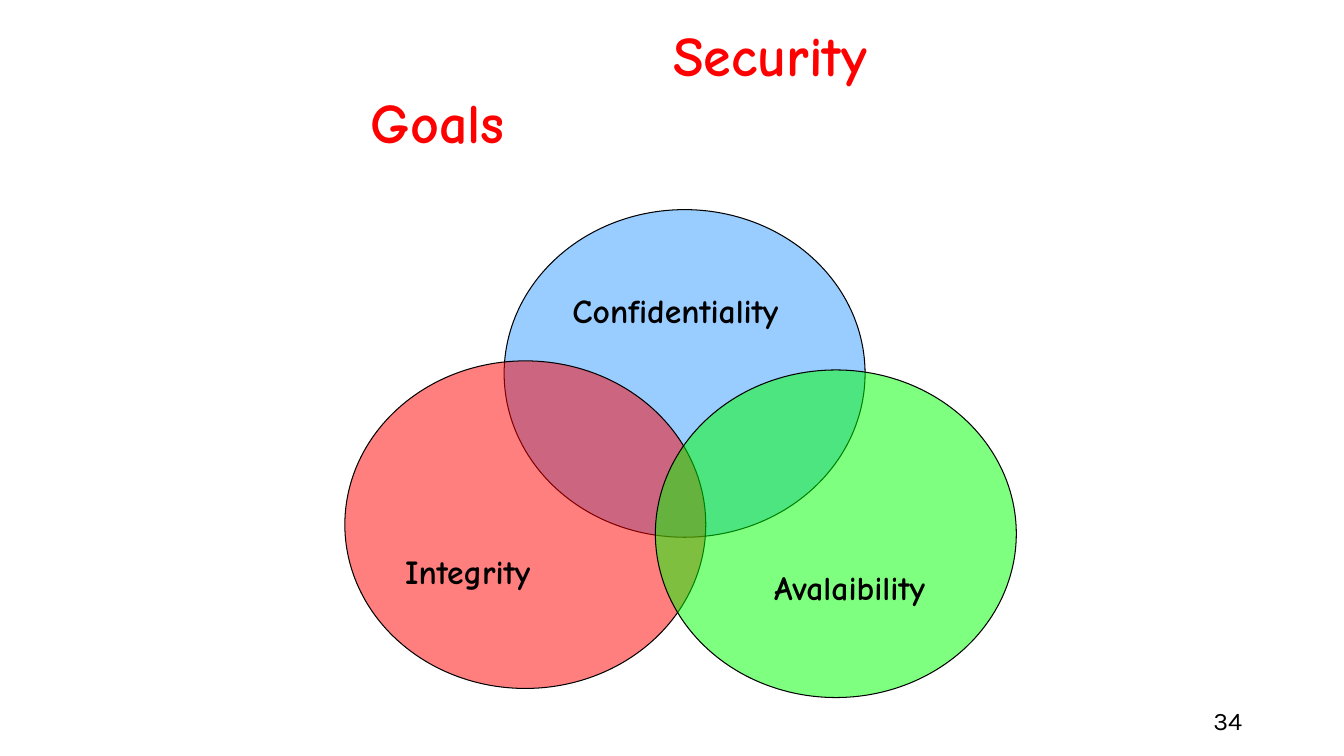
from lxml.etree import SubElement
from pptx import Presentation
from pptx.dml.color import RGBColor
from pptx.enum.shapes import MSO_SHAPE
from pptx.enum.text import MSO_ANCHOR, PP_ALIGN
from pptx.oxml.ns import qn
from pptx.util import Inches, Pt

BLACK = RGBColor(0x00, 0x00, 0x00)
RED = RGBColor(0xFF, 0x00, 0x00)
GREEN = RGBColor(0x00, 0xFF, 0x00)
SKY_BLUE = RGBColor(0x99, 0xCC, 0xFF)

# Content: circles as left, top, colour, opacity in percent
CIRCLE_SIZE = (3.58, 3.25)
CIRCLES = [
    (5, 2.08, SKY_BLUE, 100),
    (3.42, 3.58, RED, 50),
    (6.5, 3.67, GREEN, 50),
]

# Content: text, box, anchor, alignment, font format
LABEL_FONT = {"name": "Comic Neue", "size": Pt(24), "bold": True}
TITLE_FONT = {"name": "Comic Neue", "size": Pt(40), "bold": True}
NUMBER_FONT = {"name": "Karla", "size": Pt(18), "bold": False}
TITLE = ("\tSecurity Goals", (3.58, 0.58, 5.17, 0.58),
         MSO_ANCHOR.MIDDLE, PP_ALIGN.LEFT, TITLE_FONT, RED)
TITLE_TAB = 3
LABELS = [
    (text, box, MSO_ANCHOR.TOP, PP_ALIGN.LEFT, LABEL_FONT, BLACK)
    for text, box in [
        ("Integrity", (3.92, 5.42, 2.17, 0.5)),
        ("Confidentiality", (5.58, 2.83, 2.67, 0.5)),
        ("Avalaibility", (7.58, 5.58, 2.25, 0.5)),
    ]
]
SLIDE_NUMBER = ("34", (9.42, 6.95, 3, 0.4),
                MSO_ANCHOR.MIDDLE, PP_ALIGN.RIGHT, NUMBER_FONT, BLACK)


def add_circle(slide, left, top, color, opacity):
    shape = slide.shapes.add_shape(
        MSO_SHAPE.OVAL, *map(Inches, (left, top, *CIRCLE_SIZE)))
    shape.shadow.inherit = False
    shape.fill.solid()
    shape.fill.fore_color.rgb = color
    shape.line.color.rgb = BLACK
    shape.line.width = Pt(0.75)
    if opacity < 100:
        fill_color = shape.fill._xPr.find(qn("a:solidFill"))[0]
        SubElement(fill_color, qn("a:alpha"), val=str(opacity * 1000))


def add_text(slide, text, box, anchor, alignment, font_format, color, tab=None):
    frame = slide.shapes.add_textbox(*map(Inches, box)).text_frame
    frame.word_wrap = True
    frame.vertical_anchor = anchor
    paragraph = frame.paragraphs[0]
    paragraph.alignment = alignment
    if tab:
        tab_list = SubElement(paragraph._p.get_or_add_pPr(), qn("a:tabLst"))
        SubElement(tab_list, qn("a:tab"), pos=str(Inches(tab)), algn="l")
    run = paragraph.add_run()
    run.text = text
    for name, value in font_format.items():
        setattr(run.font, name, value)
    run.font.color.rgb = color


def main():
    presentation = Presentation()
    presentation.slide_width = Inches(13.33)
    presentation.slide_height = Inches(7.5)
    slide = presentation.slides.add_slide(presentation.slide_layouts[6])

    # Title
    add_text(slide, *TITLE, tab=TITLE_TAB)

    # Venn diagram
    for circle in CIRCLES:
        add_circle(slide, *circle)

    # Labels and slide number
    for label in [*LABELS, SLIDE_NUMBER]:
        add_text(slide, *label)

    presentation.save("out.pptx")


if __name__ == "__main__":
    main()
